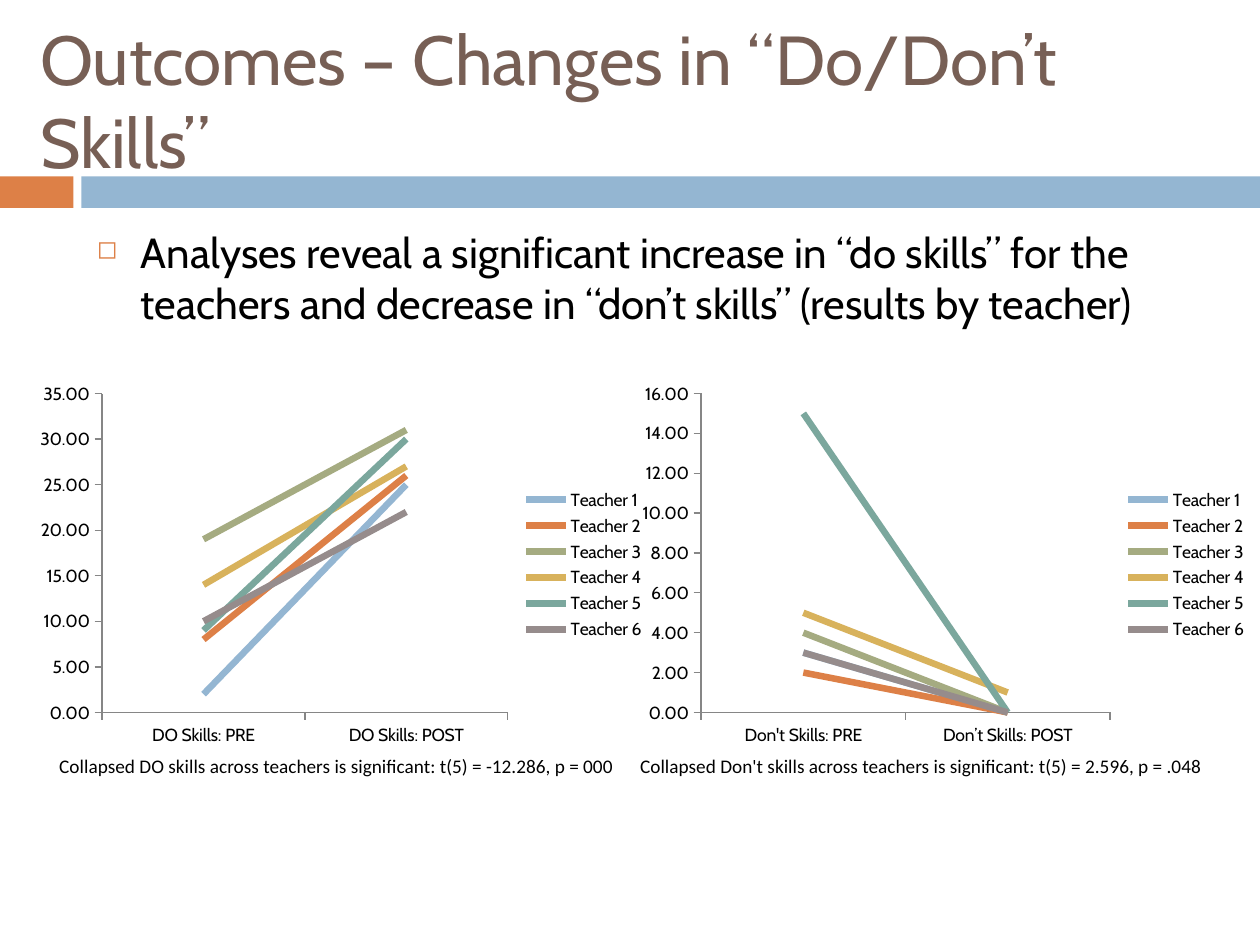
from dataclasses import dataclass

from lxml import etree
from pptx import Presentation
from pptx.chart.data import CategoryChartData
from pptx.dml.color import RGBColor
from pptx.enum.chart import XL_CHART_TYPE, XL_LEGEND_POSITION, XL_MARKER_STYLE, XL_TICK_MARK
from pptx.enum.shapes import MSO_SHAPE
from pptx.enum.text import MSO_ANCHOR
from pptx.oxml.ns import qn
from pptx.util import Pt

LINE = XL_CHART_TYPE.LINE
LEGEND_RIGHT = XL_LEGEND_POSITION.RIGHT
NO_MARKER = XL_MARKER_STYLE.NONE
TICK_OUT, TICK_NONE = XL_TICK_MARK.OUTSIDE, XL_TICK_MARK.NONE
RECT = MSO_SHAPE.RECTANGLE
TOP, MIDDLE, BOTTOM = MSO_ANCHOR.TOP, MSO_ANCHOR.MIDDLE, MSO_ANCHOR.BOTTOM


@dataclass(frozen=True)
class Theme:
    font: str = "Cabin"
    caption_font: str = "Calibri"
    title: str = "775F55"
    text: str = "000000"
    blue: str = "94B6D2"
    orange: str = "DD8047"
    axis: str = "868686"
    series: tuple = ("94B6D2", "DD8047", "A5AB81", "D8B25C", "7BA79D", "968C8C")
    title_size: float = 39.6
    body_size: float = 24
    caption_size: float = 11
    chart_size: float = 10


THEME = Theme()
CHART_TOP, CHART_W, CHART_H = 214.56, 360, 216
CAPTION_TOP, CAPTION_W, CAPTION_H = 430.56, 324.72, 14.2

PANELS = [
    dict(chart_left=15.84, caption_left=33.12,
         categories=["DO Skills: PRE", "DO Skills: POST"],
         values=[(2, 25), (8, 26), (19, 31), (14, 27), (9, 30), (10, 22)],
         caption="Collapsed DO skills across teachers is significant: t(5) = -12.286, p = 000"),
    dict(chart_left=360, caption_left=365.04,
         categories=["Don't Skills: PRE", "Don’t Skills: POST"],
         values=[(3, 0), (2, 0), (4, 0), (5, 1), (15, 0), (3, 0)],
         caption="Collapsed Don't skills across teachers is significant: t(5) = 2.596, p = .048"),
]


def rgb(color):
    return RGBColor.from_string(color)


def write(tf, text, *, size, font=THEME.font, color=THEME.text):
    p = tf.paragraphs[0]
    r = p.add_run()
    r.text = text
    r.font.size = Pt(size)
    r.font.name = font
    r.font.color.rgb = rgb(color)
    return p


def add_bar(slide, left, width, color):
    sp = slide.shapes.add_shape(RECT, Pt(left), Pt(100.8), Pt(width), Pt(18))
    sp.shadow.inherit = False
    sp.fill.solid()
    sp.fill.fore_color.rgb = rgb(color)
    sp.line.fill.background()


def add_text(slide, text, left, top, width, height, anchor=TOP, **fmt):
    sp = slide.shapes.add_textbox(Pt(left), Pt(top), Pt(width), Pt(height))
    tf = sp.text_frame
    tf.word_wrap = True
    tf.vertical_anchor = anchor
    return write(tf, text, **fmt)


def set_bullet(p, char, color, percent, indent):
    pPr = p._p.get_or_add_pPr()
    pPr.set("marL", str(Pt(indent)))
    pPr.set("indent", str(-Pt(indent)))
    bu_clr = etree.SubElement(pPr, qn("a:buClr"))
    etree.SubElement(bu_clr, qn("a:srgbClr"), val=color)
    etree.SubElement(pPr, qn("a:buSzPct"), val=str(percent * 1000))
    etree.SubElement(pPr, qn("a:buChar"), char=char)


def style_axis(axis):
    axis.has_major_gridlines = False
    axis.major_tick_mark = TICK_OUT
    axis.minor_tick_mark = TICK_NONE
    axis.format.line.color.rgb = rgb(THEME.axis)
    axis.format.line.width = Pt(0.75)


def add_line_chart(slide, left, categories, values):
    data = CategoryChartData()
    data.categories = categories
    for number, pair in enumerate(values, 1):
        data.add_series(f"Teacher {number}", pair)
    chart = slide.shapes.add_chart(LINE, Pt(left), Pt(CHART_TOP), Pt(CHART_W),
                                   Pt(CHART_H), data).chart
    chart.has_title = False
    chart.font.name = THEME.font
    chart.font.size = Pt(THEME.chart_size)
    chart.font.color.rgb = rgb(THEME.text)
    chart.has_legend = True
    chart.legend.position = LEGEND_RIGHT
    chart.legend.include_in_layout = False
    style_axis(chart.category_axis)
    style_axis(chart.value_axis)
    labels = chart.value_axis.tick_labels
    labels.number_format = "0.00"
    labels.number_format_is_linked = False
    chart.plots[0].vary_by_categories = False
    for series, color in zip(chart.plots[0].series, THEME.series):
        series.smooth = False
        series.marker.style = NO_MARKER
        series.format.line.color.rgb = rgb(color)
        series.format.line.width = Pt(3.75)


def add_caption(slide, left, text):
    table = slide.shapes.add_table(1, 1, Pt(left), Pt(CAPTION_TOP), Pt(CAPTION_W),
                                   Pt(CAPTION_H)).table
    table.first_row = False
    table.horz_banding = False
    cell = table.cell(0, 0)
    cell.fill.background()
    cell.vertical_anchor = BOTTOM
    cell.margin_left = cell.margin_right = cell.margin_top = Pt(0.75)
    cell.margin_bottom = 0
    write(cell.text_frame, text, size=THEME.caption_size, font=THEME.caption_font)
    tcPr = cell._tc.get_or_add_tcPr()
    for index, side in enumerate(("lnL", "lnR", "lnT", "lnB")):
        ln = etree.Element(qn(f"a:{side}"), w="0")
        etree.SubElement(ln, qn("a:noFill"))
        tcPr.insert(index, ln)


def main():
    prs = Presentation()
    prs.slide_width, prs.slide_height = Pt(720), Pt(540)
    slide = prs.slides.add_slide(prs.slide_layouts[6])
    add_bar(slide, 0, 42, THEME.orange)
    add_bar(slide, 46.5, 673.5, THEME.blue)
    add_text(slide, "Outcomes – Changes in “Do/Don’t Skills”", 15.84, 18, 674.64, 77.76,
             anchor=MIDDLE, size=THEME.title_size, color=THEME.title)
    p = add_text(slide, "Analyses reveal a significant increase in “do skills” for the teachers "
                 "and decrease in “don’t skills” (results by teacher)",
                 48.24, 126, 642.24, 354.24, size=THEME.body_size)
    p.space_before = Pt(7)
    set_bullet(p, "◻", THEME.orange, 60, 25.2)
    for panel in PANELS:
        add_line_chart(slide, panel["chart_left"], panel["categories"], panel["values"])
        add_caption(slide, panel["caption_left"], panel["caption"])
    prs.save("out.pptx")


if __name__ == "__main__":
    main()
